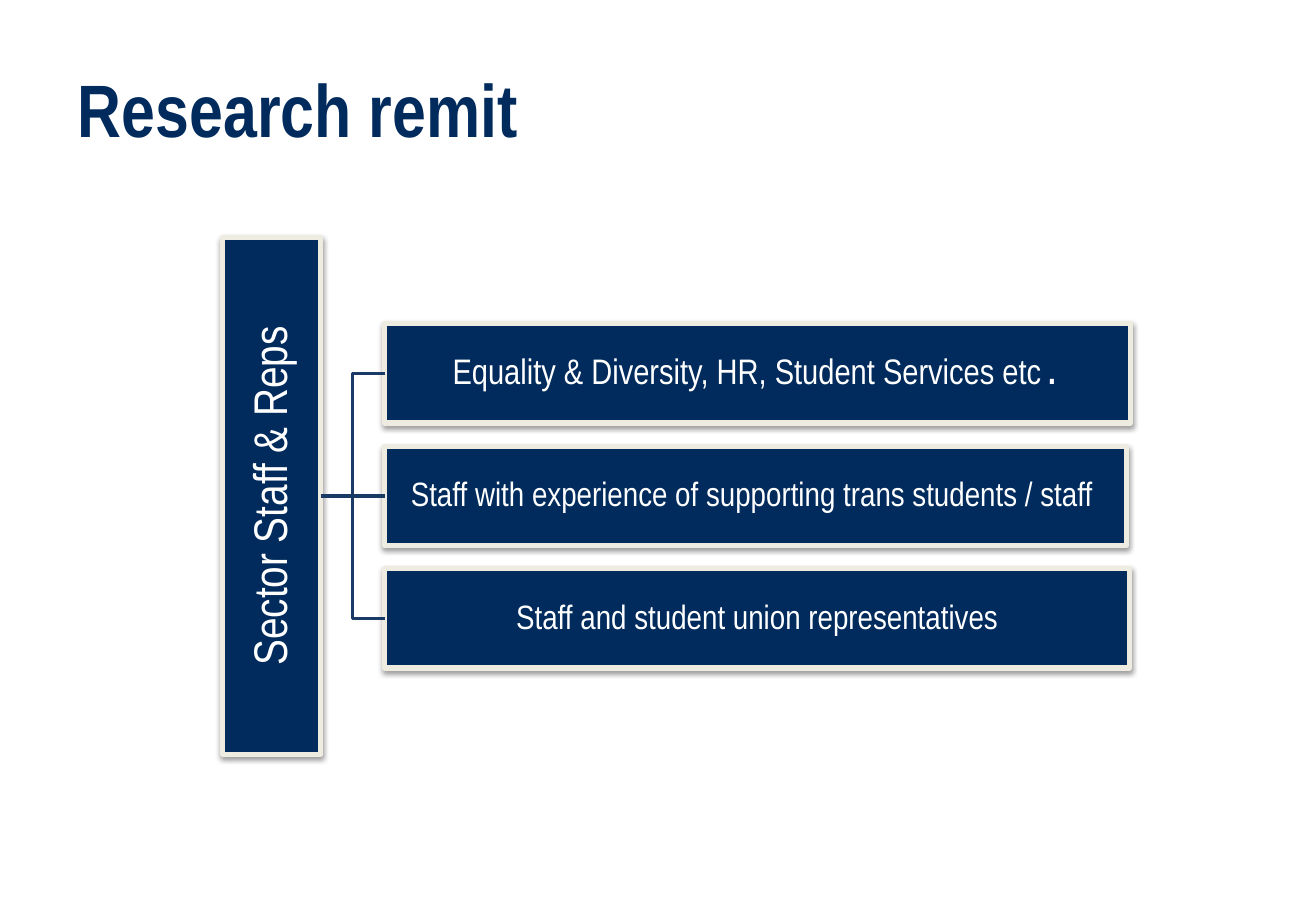
from lxml.etree import SubElement
from pptx import Presentation
from pptx.dml.color import RGBColor
from pptx.enum.shapes import MSO_CONNECTOR, MSO_SHAPE
from pptx.enum.text import MSO_ANCHOR, PP_ALIGN
from pptx.oxml.ns import qn
from pptx.util import Pt

TITLE = "Research remit"
SECTOR = "Sector Staff & Reps"
GROUPS = [
    ([("Equality & Diversity, HR, Student Services etc", "Arial Narrow"), (".", "Courier New")], 21, 737),
    ([("Staff with experience of supporting trans students / staff ", "Arial Narrow")], 20, 733),
    ([("Staff and student union representatives", "Arial Narrow")], 20, 736),
]
NAVY, CREAM, WHITE, LINK = "002B5C", "EEECE1", "FFFFFF", "193A64"
SCALE = 7620
SLIDE_SIZE = (1300, 900)
TITLE_AREA = (65, 32, 972, 150)
BAR_AREA = (220, 235, 97, 510)
GROUP_LEFT, GROUP_TOP, GROUP_HEIGHT, GROUP_STEP = 380, 320, 98, 121


def px(*lengths):
    """Turn pixel lengths into EMU."""
    return [length * SCALE for length in lengths]


def color(value):
    """Turn a hex string into a colour."""
    return RGBColor.from_string(value)


def write(shape, spans, size, ink=WHITE, bold=False, align=PP_ALIGN.CENTER, spacing=0.9):
    """Write formatted spans as the one paragraph of a shape."""
    frame = shape.text_frame
    frame.word_wrap = True
    frame.vertical_anchor = MSO_ANCHOR.MIDDLE
    para = frame.paragraphs[0]
    para.alignment = align
    para.line_spacing = spacing
    for text, font_name in spans:
        span = para.add_run()
        span.text = text
        span.font.name = font_name
        span.font.size = Pt(size)
        span.font.bold = bold
        span.font.color.rgb = color(ink)


def add_box(page, area, spans, size, inset):
    """Add a navy box with a cream border, a soft shadow and text."""
    box = page.shapes.add_shape(MSO_SHAPE.RECTANGLE, *px(*area))
    box.fill.solid()
    box.fill.fore_color.rgb = color(NAVY)
    box.line.color.rgb = color(CREAM)
    box.line.width = Pt(3)
    box.shadow.inherit = False
    effects = box._element.spPr.find(qn("a:effectLst"))
    shadow = SubElement(effects, qn("a:outerShdw"), blurRad="40000", dist="20000",
                        dir="5400000", rotWithShape="0")
    tint = SubElement(shadow, qn("a:srgbClr"), val="000000")
    SubElement(tint, qn("a:alpha"), val="38000")
    frame = box.text_frame
    frame.margin_left, frame.margin_top, frame.margin_right, frame.margin_bottom = px(*[inset] * 4)
    write(box, spans, size)
    return box


def add_link(page, start, end, kind):
    """Join the right side of one box to the left side of another."""
    link = page.shapes.add_connector(kind, 0, 0, 0, 0)
    link.begin_connect(start, 3)
    link.end_connect(end, 1)
    link.line.color.rgb = color(LINK)
    link.line.width = Pt(2)
    SubElement(link._element.spPr, qn("a:effectLst"))


def main():
    """Build the slide and save it."""
    deck = Presentation()
    deck.slide_width, deck.slide_height = px(*SLIDE_SIZE)
    page = deck.slides.add_slide(deck.slide_layouts[5])
    title = page.shapes.title
    title.left, title.top, title.width, title.height = px(*TITLE_AREA)
    write(title, [(TITLE, "Arial Narrow")], 44, ink=NAVY, bold=True, align=PP_ALIGN.LEFT, spacing=1.0)

    bar = add_box(page, BAR_AREA, [(SECTOR, "Arial Narrow")], 28, 2)
    bar.text_frame._txBody.bodyPr.set("vert", "vert270")
    for row, (spans, size, width) in enumerate(GROUPS):
        area = (GROUP_LEFT, GROUP_TOP + row * GROUP_STEP, width, GROUP_HEIGHT)
        box = add_box(page, area, spans, size, 1)
        add_link(page, bar, box, MSO_CONNECTOR.STRAIGHT if row == 1 else MSO_CONNECTOR.ELBOW)
    deck.save("out.pptx")


if __name__ == "__main__":
    main()
